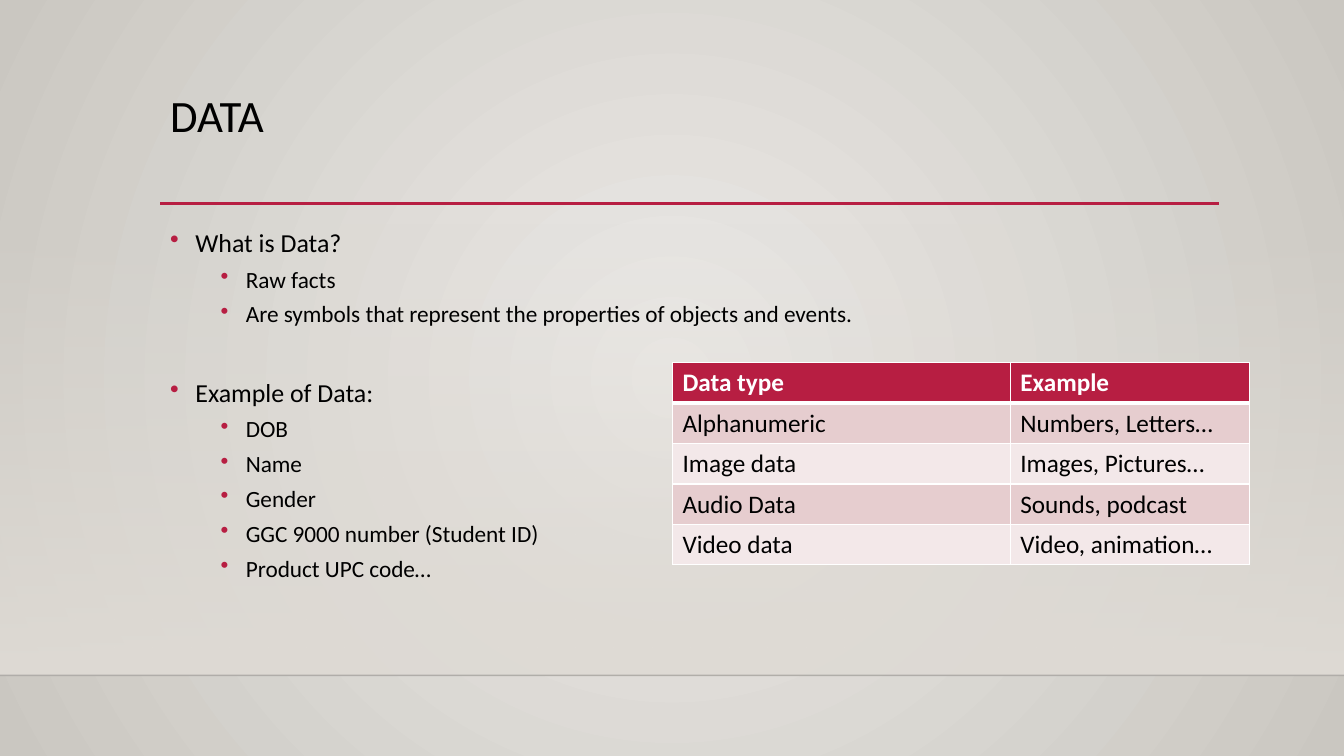
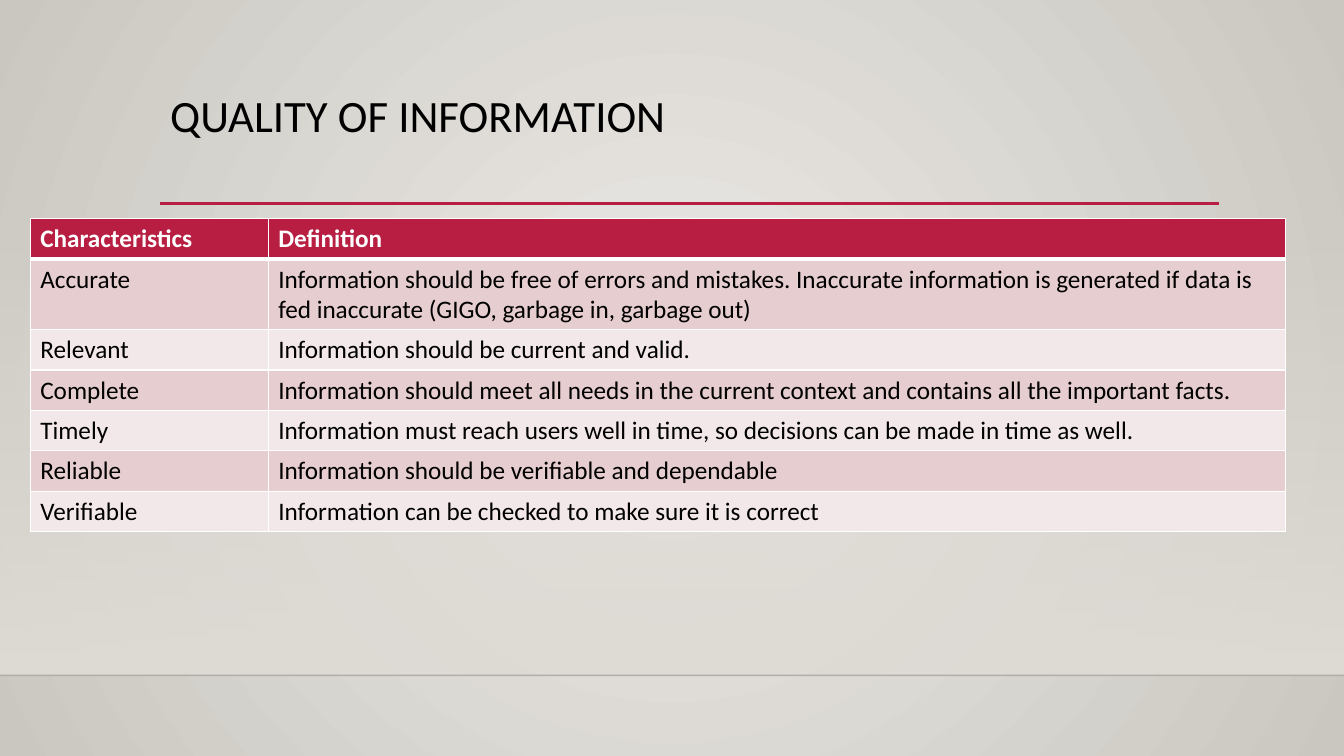
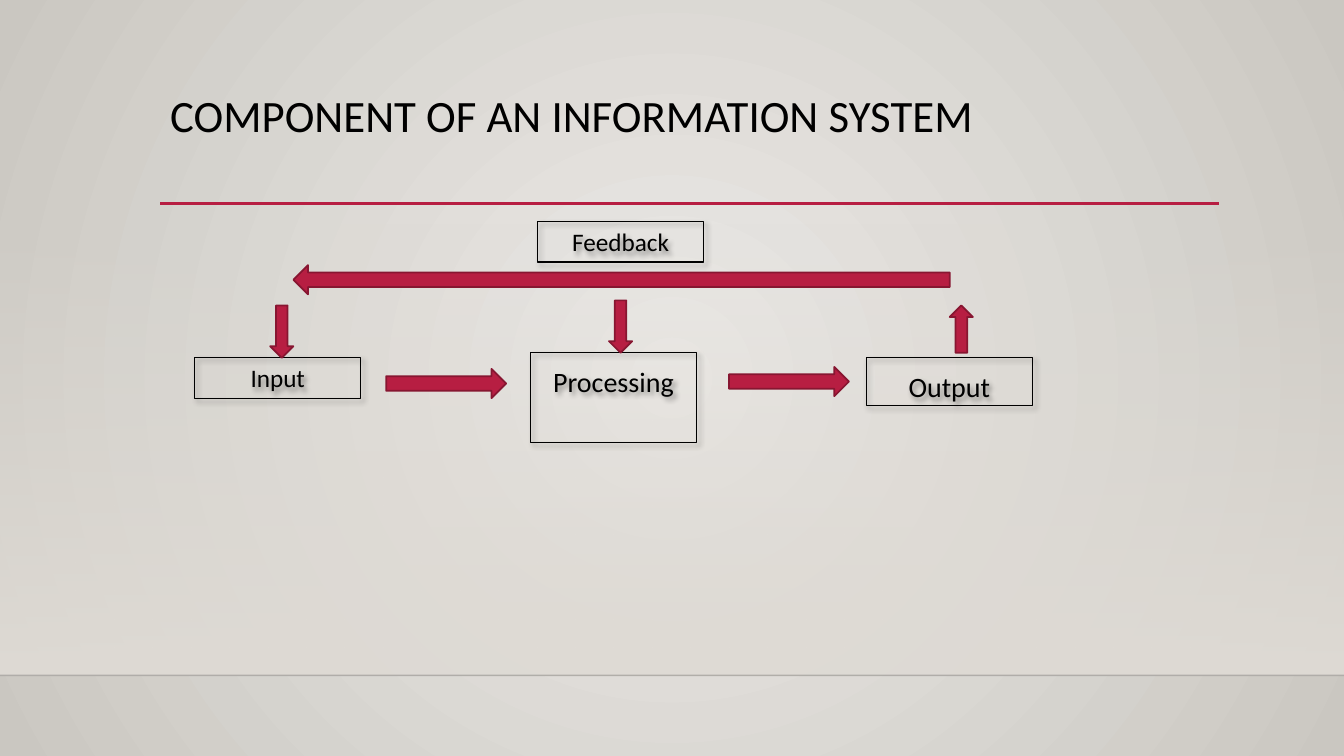
from lxml import etree
from pptx import Presentation
from pptx.dml.color import RGBColor
from pptx.enum.shapes import MSO_CONNECTOR, MSO_SHAPE
from pptx.enum.text import MSO_ANCHOR, PP_ALIGN
from pptx.oxml import parse_xml
from pptx.oxml.ns import qn
from pptx.util import Inches, Pt

RECT, LINE = MSO_SHAPE.RECTANGLE, MSO_CONNECTOR.STRAIGHT
RIGHT, LEFT = MSO_SHAPE.RIGHT_ARROW, MSO_SHAPE.LEFT_ARROW
UP, DOWN = MSO_SHAPE.UP_ARROW, MSO_SHAPE.DOWN_ARROW
TOP, CENTER = MSO_ANCHOR.TOP, PP_ALIGN.CENTER
NS = 'xmlns:a="http://schemas.openxmlformats.org/drawingml/2006/main"'

HUES = {
    "text": "000000", "white": "FFFFFF", "red": "B71E42", "edge": "871631",
    "odd": "E6CDCF", "even": "F3E8E9", "light": "ECEAE7", "dark": "CAC7C1",
    "band": "DFDBD5", "rule": "000001",
}
WIDE, HIGH = 13.33, 7.5
EDGE, SPAN, FLOOR = 1.59, 10.5, 6.7

STYLES = {
    "title": {"size": Pt(32), "color": "text"},
    "main": {"size": Pt(18.5), "color": "text"},
    "sub": {"size": Pt(16.6), "color": "text"},
    "head": {"size": Pt(18), "color": "white", "bold": True},
    "cell": {"size": Pt(18), "color": "text", "bold": False},
    "big": {"size": Pt(20), "color": "text"},
}

POINTS = [
    ("What is Data?", ["Raw facts",
                       "Are symbols that represent the properties of objects and events."]),
    ("Example of Data:", ["DOB", "Name", "Gender", "GGC 9000 number (Student ID)",
                          "Product UPC code…"]),
]
TYPES = [
    ("Data type", "Example"),
    ("Alphanumeric", "Numbers, Letters…"),
    ("Image data", "Images, Pictures…"),
    ("Audio Data", "Sounds, podcast"),
    ("Video data", "Video, animation…"),
]
TRAITS = [
    ("Characteristics", "Definition"),
    ("Accurate", "Information should be free of errors and mistakes. Inaccurate information "
                 "is generated if data is fed inaccurate (GIGO, garbage in, garbage out)"),
    ("Relevant", "Information should be current and valid."),
    ("Complete", "Information should meet all needs in the current context and contains "
                 "all the important facts."),
    ("Timely", "Information must reach users well in time, so decisions can be made in time as well."),
    ("Reliable", "Information should be verifiable and dependable"),
    ("Verifiable", "Information can be checked to make sure it is correct"),
]
STEP, BOX = 3.33, 1.65
COLS = [1.93 + STEP * i for i in range(3)]
STAGES = [
    ("Input", COLS[0], 3.55, 0.4, "cell", 1),
    ("Processing", COLS[1], 3.5, 0.89, "big", 1.2),
    ("Output", COLS[2], 3.55, 0.47, "big", 1.2),
    ("Feedback", 5.33, 2.2, 0.4, "cell", 1),
]
ARROWS = [
    (RIGHT, 3.83, 3.66, 1.19, 0.29), (RIGHT, 7.23, 3.64, 1.19, 0.29),
    (UP, 9.42, 3.03, 0.23, 0.47), (LEFT, 2.91, 2.63, 6.51, 0.29),
    (DOWN, 2.68, 3.03, 0.23, 0.52), (DOWN, 6.04, 2.98, 0.23, 0.52),
]


def rgb(name):
    return RGBColor.from_string(HUES[name])


def tint(name, alpha=100):
    return f'<a:srgbClr val="{HUES[name]}"><a:alpha val="{alpha * 1000}"/></a:srgbClr>'


def node(tag, inner="", attrs=""):
    return parse_xml(f"<a:{tag} {NS} {attrs}>{inner}</a:{tag}>")


def blend(root, stops, shade):
    gs = "".join(f'<a:gs pos="{pos * 1000}">{tint(*hue)}</a:gs>' for pos, hue in stops)
    old = root.find(".//" + qn("a:solidFill"))
    old.getparent().replace(old, node("gradFill", f"<a:gsLst>{gs}</a:gsLst>{shade}"))


def style(para, name):
    para.font.name = "Calibri"
    for key, val in STYLES[name].items():
        if key == "color":
            para.font.color.rgb = rgb(val)
        else:
            setattr(para.font, key, val)


def write(para, text, name):
    para.text = text
    style(para, name)


def rule(slide, x, y, wide, hue, thick):
    line = slide.shapes.add_connector(LINE, *map(Inches, (x, y, x + wide, y)))
    line.line.color.rgb, line.line.width = rgb(hue), Pt(thick)
    etree.SubElement(line._element.spPr, qn("a:effectLst"))
    return line


def shape(slide, kind, spot, fill=None, edge=None, thick=1):
    item = slide.shapes.add_shape(kind, *map(Inches, spot))
    item.shadow.inherit = False
    if fill:
        item.fill.solid()
        item.fill.fore_color.rgb = rgb(fill)
    else:
        item.fill.background()
    if edge:
        item.line.color.rgb, item.line.width = rgb(edge), Pt(thick)
    else:
        item.line.fill.background()
    return item


def textbox(slide, spot):
    frame = slide.shapes.add_textbox(*map(Inches, spot)).text_frame
    frame.word_wrap, frame.vertical_anchor = True, TOP
    return frame


def start(deck, title):
    slide = deck.slides.add_slide(deck.slide_layouts[6])
    slide.background.fill.solid()
    blend(slide._element, [(0, ("light",)), (100, ("dark",))],
          '<a:path path="circle"><a:fillToRect l="50000" t="50000" r="50000" b="50000"/></a:path>')
    band = shape(slide, RECT, (0, 2.21, WIDE, FLOOR - 2.21), "band")
    blend(band._element, [(0, ("band", 0)), (100, ("band",))], '<a:lin ang="5400000" scaled="0"/>')
    floor = rule(slide, 0, FLOOR, WIDE, "rule", 1)
    hue = floor._element.find(".//" + qn("a:srgbClr"))
    hue.append(node("alpha", attrs='val="20000"'))
    rule(slide, EDGE, 2.02, SPAN, "red", 2.5)
    para = textbox(slide, (EDGE, 0.88, SPAN, 1.15)).paragraphs[0]
    para.line_spacing = 0.9
    write(para, title, "title")
    return slide


def bullets(slide, groups):
    frame = textbox(slide, (EDGE, 2.2, SPAN, 3.77))
    rows = []
    for i, (head, subs) in enumerate(groups):
        rows += [(head, "main", 0.25, 35 if i else 0)]
        rows += [(sub, "sub", 0.75, 5) for sub in subs]
    for i, (text, name, left, gap) in enumerate(rows):
        para = frame.add_paragraph() if i else frame.paragraphs[0]
        props = para._p.get_or_add_pPr()
        props.set("marL", str(Inches(left)))
        props.set("indent", str(Inches(-0.25)))
        props.append(node("buClr", tint("red")))
        props.append(node("buChar", attrs='char="•"'))
        para.space_before = Pt(gap)
        write(para, text, name)


def grid(slide, x, y, cols, rows, tall=()):
    highs = [0.7 if i in tall else 0.4 for i in range(len(rows))]
    spot = map(Inches, (x, y, sum(cols), sum(highs)))
    table = slide.shapes.add_table(len(rows), len(cols), *spot).table
    for col, wide in zip(table.columns, cols):
        col.width = Inches(wide)
    for r, row in enumerate(rows):
        table.rows[r].height = Inches(highs[r])
        for c, text in enumerate(row):
            cell = table.cell(r, c)
            cell.fill.solid()
            cell.fill.fore_color.rgb = rgb(("odd" if r % 2 else "even") if r else "red")
            write(cell.text_frame.paragraphs[0], text, "cell" if r else "head")
            thick = {"L": 1, "R": 1, "T": 3 if r == 1 else 1, "B": 1 if r else 3}
            for i, (side, size) in enumerate(thick.items()):
                edge = node("ln" + side, f"<a:solidFill>{tint('white')}</a:solidFill>",
                            f'w="{Pt(size)}"')
                cell._tc.get_or_add_tcPr().insert(i, edge)


def stage(slide, text, x, y, high, name, space):
    box = shape(slide, RECT, (x, y, BOX, high), edge="text", thick=0.75)
    box._element.spPr.find(qn("a:effectLst")).append(node(
        "outerShdw", tint("text", 40),
        f'blurRad="{Pt(4)}" dist="{Pt(3)}" dir="2700000" algn="ctr" rotWithShape="0"'))
    frame = box.text_frame
    frame.word_wrap, frame.vertical_anchor = True, TOP
    para = frame.paragraphs[0]
    para.alignment, para.line_spacing = CENTER, space
    write(para, text, name)


def main():
    deck = Presentation()
    deck.slide_width, deck.slide_height = Inches(WIDE), Inches(HIGH)

    data = start(deck, "DATA")
    bullets(data, POINTS)
    grid(data, 6.67, 3.6, (3.35, 2.37), TYPES)

    grid(start(deck, "QUALITY OF INFORMATION"), 0.3, 2.17, (2.36, 10.09), TRAITS, tall={1})

    system = start(deck, "COMPONENT OF AN INFORMATION SYSTEM")
    for item in STAGES:
        stage(system, *item)
    for kind, *spot in ARROWS:
        shape(system, kind, spot, "red", "edge", 1.25)

    deck.save("out.pptx")


if __name__ == "__main__":
    main()
